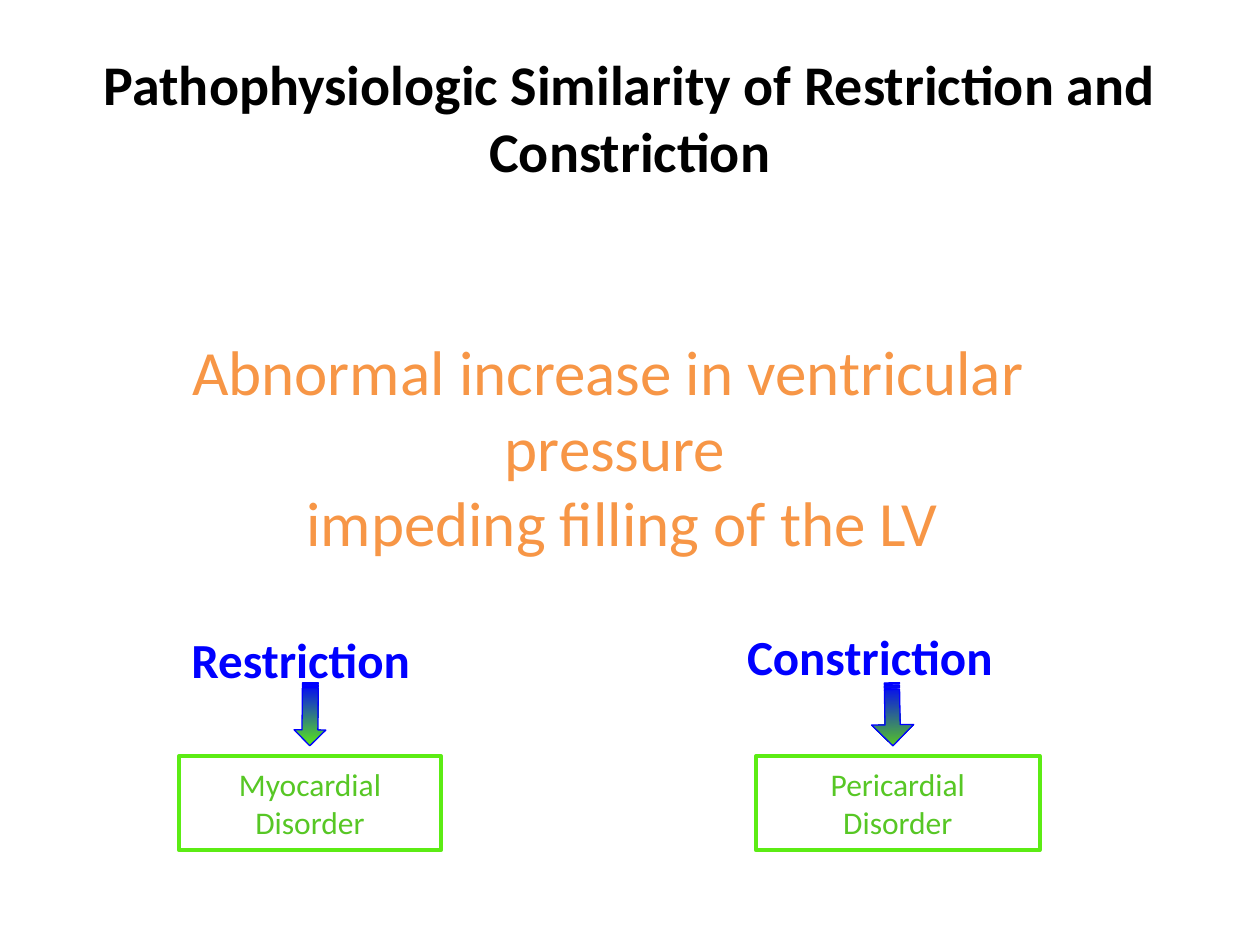
from pptx import Presentation
from pptx.dml.color import RGBColor
from pptx.enum import shapes, text
from pptx.util import Cm, Pt

BLACK = RGBColor(0x00, 0x00, 0x00)
WHITE = RGBColor(0xFF, 0xFF, 0xFF)
BLUE = RGBColor(0x00, 0x00, 0xFF)
ORANGE = RGBColor(0xF7, 0x96, 0x46)
LIME = RGBColor(0x5C, 0xEC, 0x14)
GREEN = RGBColor(0x57, 0xC7, 0x25)
FONT = "Calibri"

TITLE = "Pathophysiologic Similarity of Restriction and Constriction"
FINDING = ["Abnormal increase in ventricular ", "pressure", " impeding filling of the LV"]
CAUSES = [
    {
        "name": "Restriction", "label": (3.61, 12.7, 6.35, 1.32), "spacing": 0.9,
        "disorder": ["Myocardial", "Disorder"], "box": (3.61, 15.24, 5.28, 1.9),
        "arrow_center": 6.25, "arrow_width": 0.64, "shaft": 0.5,
        "rotation": 90.5, "tip": LIME,
    },
    {
        "name": "Constriction", "label": (14.81, 12.5, 6.99, 1.45), "spacing": 1.0,
        "disorder": ["Pericardial", "Disorder"], "box": (15.24, 15.24, 5.72, 1.9),
        "arrow_center": 17.99, "arrow_width": 0.85, "shaft": 0.36,
        "rotation": 89, "tip": GREEN,
    },
]
ARROW_MIDDLE = 14.4
ARROW_LENGTH = 1.27


def write(shape, lines, size, color, bold=False, align=text.PP_ALIGN.CENTER,
          anchor=text.MSO_ANCHOR.MIDDLE, wrap=True, spacing=1.0):
    frame = shape.text_frame
    frame.word_wrap = wrap
    frame.vertical_anchor = anchor
    for index, line in enumerate(lines):
        paragraph = frame.add_paragraph() if index else frame.paragraphs[0]
        paragraph.alignment = align
        paragraph.line_spacing = spacing
        run = paragraph.add_run()
        run.text = line
        run.font.name = FONT
        run.font.size = Pt(size)
        run.font.bold = bold
        run.font.color.rgb = color


def add_text(slide, place, lines, size, color, **options):
    write(slide.shapes.add_textbox(*map(Cm, place)), lines, size, color, **options)


def add_box(slide, place, lines, size, color, line_color, line_width):
    box = slide.shapes.add_shape(shapes.MSO_SHAPE.RECTANGLE, *map(Cm, place))
    box.shadow.inherit = False
    box.fill.solid()
    box.fill.fore_color.rgb = WHITE
    box.line.color.rgb = line_color
    box.line.width = Pt(line_width)
    write(box, lines, size, color, wrap=False)


def add_arrow(slide, cause):
    width = cause["arrow_width"]
    place = (cause["arrow_center"] - ARROW_LENGTH / 2, ARROW_MIDDLE - width / 2,
             ARROW_LENGTH, width)
    arrow = slide.shapes.add_shape(shapes.MSO_SHAPE.STRIPED_RIGHT_ARROW, *map(Cm, place))
    arrow.rotation = cause["rotation"]
    arrow.adjustments[0] = cause["shaft"]
    arrow.adjustments[1] = 0.5
    arrow.shadow.inherit = False
    arrow.fill.gradient()
    arrow.fill.gradient_angle = 0
    for stop, position, color in zip(arrow.fill.gradient_stops, (0, 1), (BLUE, cause["tip"])):
        stop.position = position
        stop.color.rgb = color
    arrow.line.color.rgb = BLUE
    arrow.line.width = Pt(0.75)


def main():
    presentation = Presentation()
    presentation.slide_width = Cm(25.4)
    presentation.slide_height = Cm(19.05)
    slide = presentation.slides.add_slide(presentation.slide_layouts[6])

    add_text(slide, (1.27, 0.76, 22.86, 3.18), [TITLE], 32, BLACK, bold=True)
    add_box(slide, (1.07, 6.55, 22.66, 4.88), FINDING, 36, ORANGE, WHITE, 0.75)
    for cause in CAUSES:
        add_box(slide, cause["box"], cause["disorder"], 18, GREEN, LIME, 2.25)
        add_arrow(slide, cause)
        add_text(slide, cause["label"], [cause["name"]], 28, BLUE, bold=True,
                 align=text.PP_ALIGN.LEFT, anchor=text.MSO_ANCHOR.TOP,
                 spacing=cause["spacing"])

    presentation.save("out.pptx")


if __name__ == "__main__":
    main()
